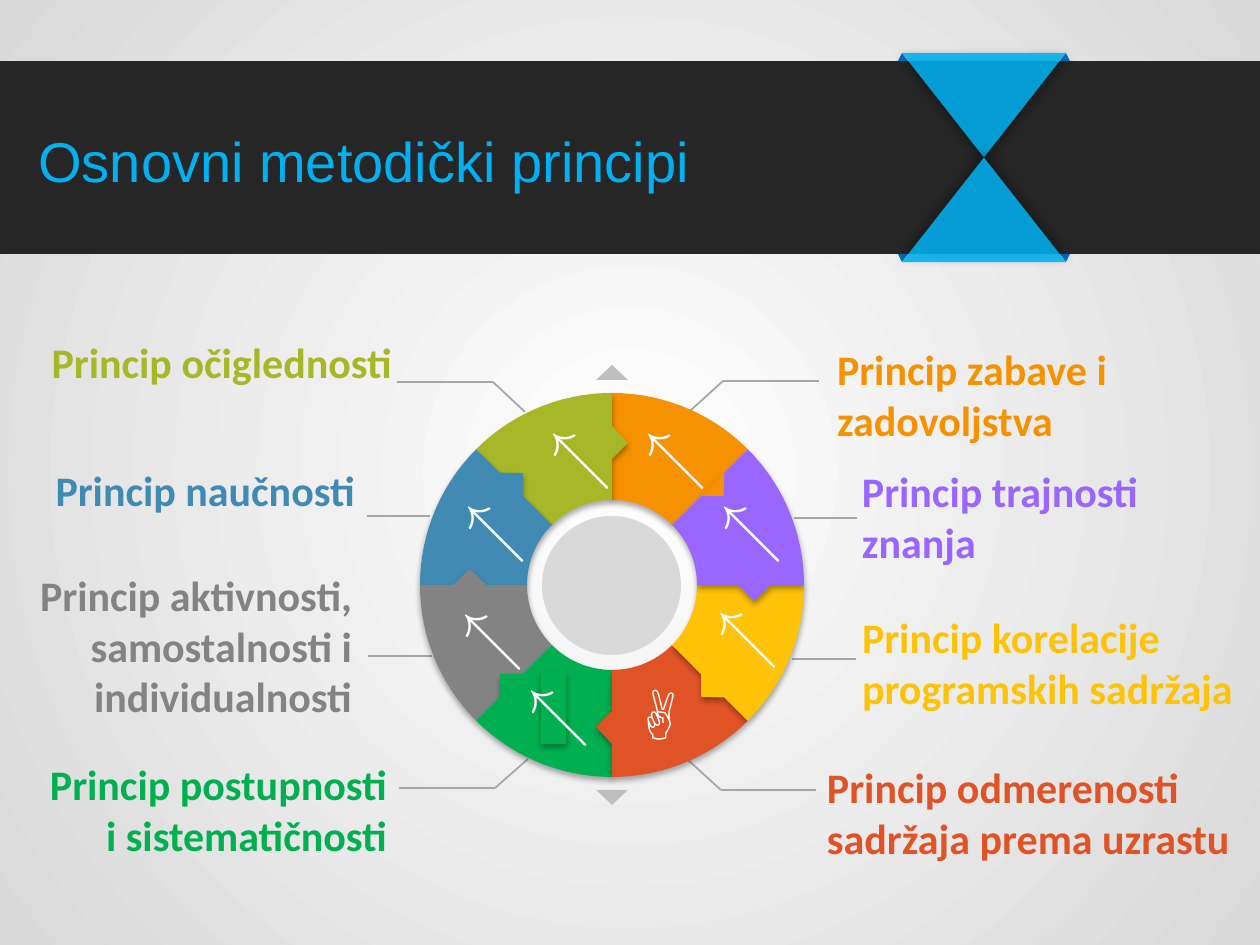
from math import cos, radians, sin

from lxml import etree
from pptx import Presentation
from pptx import util as u
from pptx.dml.color import RGBColor
from pptx.enum import shapes, text
from pptx.oxml import ns

BLACK = RGBColor(0x26, 0x26, 0x26)
WHITE = RGBColor(0xFF, 0xFF, 0xFF)
EDGE = RGBColor(0xD9, 0xD9, 0xD9)
MARK = RGBColor(0xBF, 0xBF, 0xBF)
RULE = RGBColor(0xA6, 0xA6, 0xA6)
SKY = RGBColor(0x00, 0xB0, 0xF0)
NAVY = RGBColor(0x00, 0x70, 0xC0)
ORANGE = RGBColor(0xF6, 0x92, 0x00)
OLIVE = RGBColor(0xA6, 0xB7, 0x27)
BLUE = RGBColor(0x41, 0x8A, 0xB3)
GRAY = RGBColor(0x83, 0x83, 0x83)
GREEN = RGBColor(0x00, 0xB0, 0x50)
RED = RGBColor(0xDF, 0x53, 0x27)
GOLD = RGBColor(0xFE, 0xC3, 0x06)
PURPLE = RGBColor(0x99, 0x66, 0xFF)

# Colour, icon and icon offset from the hub, counter-clockwise from the top
WEDGES = [
    (ORANGE, "↖", 20, -175),
    (OLIVE, "↖", -75, -175),
    (BLUE, "↖", -160, -102),
    (GRAY, "↖", -163, 6),
    (GREEN, "↖", -97, 82),
    (RED, "✌", 18, 84),
    (GOLD, "↖", 92, 4),
    (PURPLE, "↖", 96, -102),
]

# Wording, colour, box, right-aligned, wrapped
LABELS = [
    ("Princip očiglednosti", OLIVE, (48, 337, 344, 51), True, False),
    ("Princip naučnosti", BLUE, (53, 465, 302, 51), True, False),
    ("Princip aktivnosti, samostalnosti i individualnosti", GRAY,
     (-131, 570, 483, 152), True, True),
    ("Princip postupnosti i sistematičnosti", GREEN,
     (48, 759, 339, 102), True, True),
    ("Princip zabave i zadovoljstva", ORANGE,
     (837, 344, 372, 102), False, True),
    ("Princip trajnosti znanja", PURPLE, (862, 466, 292, 102), False, True),
    ("Princip korelacije programskih sadržaja", GOLD,
     (862, 612, 373, 102), False, True),
    ("Princip odmerenosti sadržaja prema uzrastu", RED,
     (827, 762, 407, 102), False, True),
]

# Leader lines, as offsets from the hub
LEADERS = [
    [(-87, -173), (-119, -203), (-215, -203)],
    [(78, -174), (111, -204), (207, -204)],
    [(-84, 174), (-117, 203), (-213, 203)],
    [(76, 175), (109, 205), (204, 205)],
    [(-182, -69), (-245, -69)],
    [(245, -67), (182, -67)],
    [(-180, 71), (-244, 71)],
    [(244, 74), (180, 74)],
]


def px(n):
    return u.Emu(round(n * 914400 / 126))


def paint(shape, color):
    shape.shadow.inherit = False
    shape.fill.solid()
    shape.fill.fore_color.rgb = color
    shape.line.fill.background()
    return shape


def shade(shape, blur, dist, turn, alpha):
    effect = shape._element.spPr.find(ns.qn("a:effectLst"))
    cast = etree.SubElement(
        effect, ns.qn("a:outerShdw"), blurRad=str(u.Pt(blur)),
        dist=str(u.Pt(dist)), dir=str(turn * 60000), rotWithShape="0")
    tint = etree.SubElement(cast, ns.qn("a:srgbClr"), val="000000")
    etree.SubElement(tint, ns.qn("a:alpha"), val=str(alpha * 1000))


def add(slide, kind, box, color):
    return paint(slide.shapes.add_shape(kind, *map(px, box)), color)


def outline(slide, points, color):
    dots = [(px(x), px(y)) for x, y in points]
    pen = slide.shapes.build_freeform(*dots[0])
    pen.add_line_segments(dots[1:], close=True)
    return paint(pen.convert_to_shape(), color)


def write(slide, box, words, size, font, color, align, bold=False,
          wrap=True, inset=None, anchor=text.MSO_ANCHOR.TOP):
    frame = slide.shapes.add_textbox(*map(px, box)).text_frame
    frame.word_wrap = wrap
    frame.vertical_anchor = anchor
    if inset is not None:
        frame.margin_left = frame.margin_right = inset
        frame.margin_top = frame.margin_bottom = inset
    para = frame.paragraphs[0]
    para.alignment = align
    run = para.add_run()
    run.text = words
    run.font.size = u.Pt(size)
    run.font.name = font
    run.font.bold = bold
    run.font.color.rgb = color


def backdrop(slide):
    fill = slide.background.fill
    fill.gradient()
    for stop, color in zip(fill.gradient_stops, (WHITE, EDGE)):
        stop.color.rgb = color
    grad = slide.element.find(".//" + ns.qn("a:gradFill"))
    grad.remove(grad.find(ns.qn("a:lin")))
    ring = etree.SubElement(grad, ns.qn("a:path"), path="circle")
    etree.SubElement(ring, ns.qn("a:fillToRect"),
                     l="50000", t="50000", r="50000", b="50000")


def header(slide, x, y, w, h):
    add(slide, shapes.MSO_SHAPE.RECTANGLE, (x, y, w, h), BLACK)
    # Folded ribbon: dark corner tabs under two facing triangles
    left, wide, lip = x + 902, 164, 8
    for side, out in ((left, -1), (left + wide, 1)):
        for rim, up in ((y, -1), (y + h, 1)):
            outline(slide, [(side, rim + up * lip), (side + out * 4, rim),
                            (side - out * 6, rim)], NAVY)
    half = h / 2 + lip
    for top, flip, turn in ((y - lip, True, 90), (y - lip + half, False, 270)):
        fold = add(slide, shapes.MSO_SHAPE.ISOSCELES_TRIANGLE,
                   (left, top, wide, half), SKY)
        shade(fold, 7, 3, turn, 40)
        tint = fold._element.spPr.find(".//" + ns.qn("a:srgbClr"))
        etree.SubElement(tint, ns.qn("a:alpha"), val="87000")
        if flip:
            fold._element.spPr.find(ns.qn("a:xfrm")).set("flipV", "1")
    write(slide, (x + 26, y + 55, 746, 88), "Osnovni metodički principi", 32,
          "Arial", SKY, text.PP_ALIGN.LEFT, anchor=text.MSO_ANCHOR.MIDDLE)


def wheel(slide, x, y, size):
    outer, inner = size / 2, 85
    cx, cy = x + outer, y + outer

    def spot(radius, angle, shift=0):
        a = radians(angle)
        return (cx + radius * sin(a) + shift * cos(a),
                cy - radius * cos(a) + shift * sin(a))

    def tooth(angle):
        return [spot(159, angle), spot(142, angle, 16), spot(126, angle)]

    # Hub, pointers and leader lines
    add(slide, shapes.MSO_SHAPE.OVAL, (cx - 70, cy - 69, 139, 139), EDGE)
    for way in (-1, 1):
        base = cy + way * 205
        outline(slide, [(cx - 16, base), (cx, base + way * 15),
                        (cx + 16, base)], MARK)
    for stops in LEADERS:
        for (ax, ay), (bx, by) in zip(stops, stops[1:]):
            line = slide.shapes.add_connector(
                shapes.MSO_CONNECTOR.STRAIGHT, px(cx + ax), px(cy + ay),
                px(cx + bx), px(cy + by))
            line.line.color.rgb = RULE
            line.line.width = u.Pt(1)
            etree.SubElement(line._element.spPr, ns.qn("a:effectLst"))

    # Each wedge overlaps the next one clockwise with its tooth
    for i, (color, *_) in enumerate(WEDGES):
        start, end = -45 * i, 45 - 45 * i
        rim = [spot(outer, a) for a in range(start, end + 1, 3)]
        bore = [spot(inner, a) for a in range(end, start - 1, -3)]
        shade(outline(slide, rim + tooth(end) + bore, color), 3.5, 2.2, 90, 32)
        if color == GREEN:
            patch = add(slide, shapes.MSO_SHAPE.RECTANGLE,
                        (cx - 71, cy + 87, 25, 72), color)
            shade(patch, 3.5, 2.2, 90, 32)
    outline(slide, tooth(45), ORANGE)

    for _, icon, dx, dy in WEDGES:
        write(slide, (cx + dx, cy + dy, 62, 89), icon, 36, "Roboto", WHITE,
              text.PP_ALIGN.CENTER, wrap=False)


def labels(slide):
    for words, color, box, right, wrap in LABELS:
        align = text.PP_ALIGN.RIGHT if right else text.PP_ALIGN.LEFT
        write(slide, box, words, 24, "Calibri", color, align, bold=True,
              wrap=wrap, inset=0)


def main():
    deck = Presentation()
    deck.slide_width, deck.slide_height = px(1260), px(945)
    slide = deck.slides.add_slide(deck.slide_layouts[6])
    backdrop(slide)
    header(slide, 0, 61, 1260, 193)
    wheel(slide, 420, 393, 384)
    labels(slide)
    deck.save("out.pptx")


if __name__ == "__main__":
    main()
